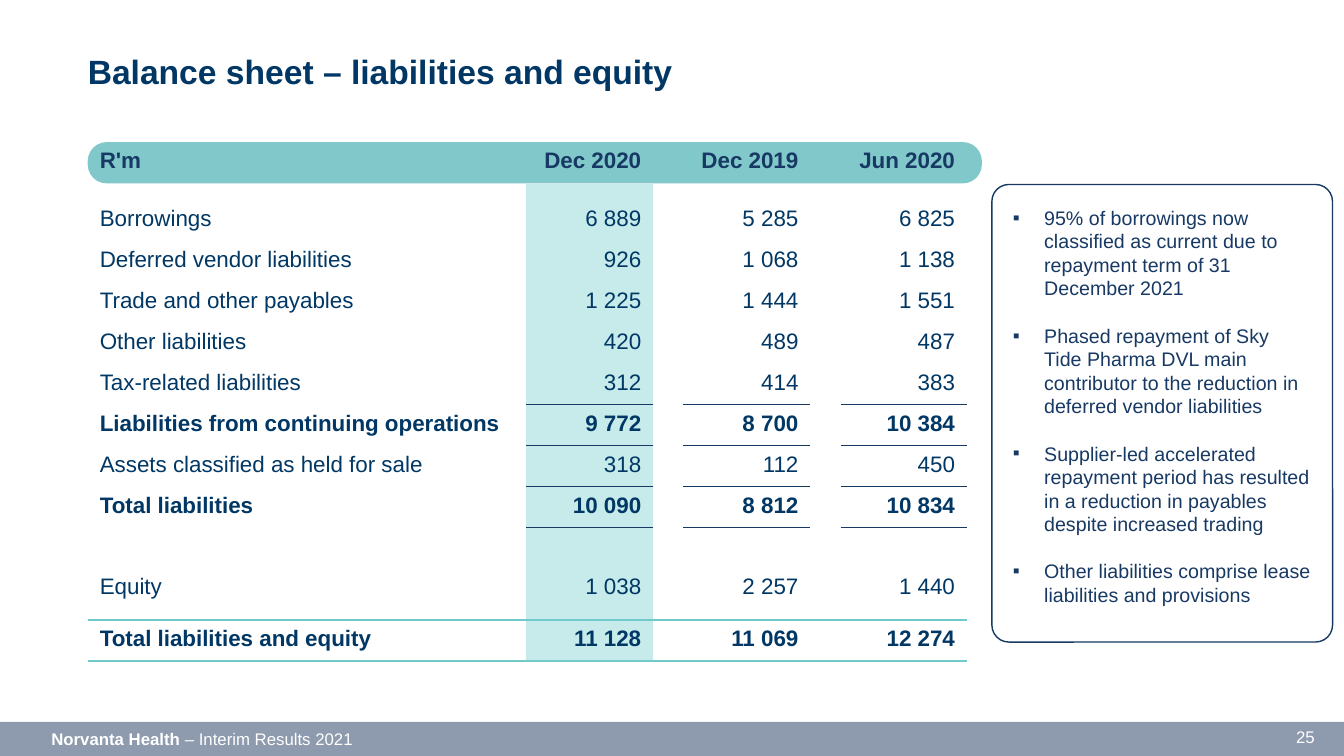
from dataclasses import dataclass

from lxml import etree
from pptx import Presentation
from pptx import util as u
from pptx.dml.color import RGBColor
from pptx.enum import shapes, text
from pptx.oxml import ns

NAVY, INK, TEAL, PALE = "003764", "173963", "81C8CB", "C7EBEB"
RULE, SLATE, WHITE = "70CACB", "8E9AAD", "FFFFFF"
NO_STYLE = "{2D5ABB26-0587-4C30-8999-92F81FD0307C}"
RIGHT, TOP, MIDDLE = text.PP_ALIGN.RIGHT, text.MSO_ANCHOR.TOP, text.MSO_ANCHOR.MIDDLE

# Lengths are percentages of the slide's width or height.
LEFT, TABLE_TOP = 6.53, 18.53
COLUMNS = [32.63, 9.45, 2.25, 9.45, 2.25, 9.4]
VALUE_COLUMNS = [1, 3, 5]
LINE = 5.41


@dataclass
class Row:
    label: str = ""
    values: tuple[str, ...] = ()
    height: float = LINE
    bold: bool = False
    color: str = NAVY
    spacing: float = 0.8
    rule: str = ""  # "sum" underlines the values, "total" the whole row


ROWS = [
    Row("R'm", ("Dec 2020", "Dec 2019", "Jun 2020"), 5.87, True, INK, 0.9),
    Row(height=2.13),
    Row("Borrowings", ("6 889", "5 285", "6 825")),
    Row("Deferred vendor liabilities", ("926", "1 068", "1 138")),
    Row("Trade and other payables", ("1 225", "1 444", "1 551")),
    Row("Other liabilities", ("420", "489", "487")),
    Row("Tax-related liabilities", ("312", "414", "383"), rule="sum"),
    Row("Liabilities from continuing operations", ("9 772", "8 700", "10 384"), bold=True),
    Row("Assets classified as held for sale", ("318", "112", "450"), rule="sum"),
    Row("Total liabilities", ("10 090", "8 812", "10 834"), bold=True),
    Row(),
    Row("Equity", ("1 038", "2 257", "1 440")),
    Row(height=1.47, rule="total"),
    Row("Total liabilities and equity", ("11 128", "11 069", "12 274"), bold=True, rule="total"),
]
COMMENTS = [
    "95% of borrowings now classified as current due to repayment term of 31 December 2021",
    "Phased repayment of Sky Tide Pharma DVL main contributor to the reduction in "
    "deferred vendor liabilities",
    "Supplier-led accelerated repayment period has resulted in a reduction in payables "
    "despite increased trading",
    "Other liabilities comprise lease liabilities and provisions",
]

deck = Presentation()
deck.slide_width, deck.slide_height = u.Inches(13.33), u.Inches(7.5)


def wide(share: float) -> int:
    return round(deck.slide_width * share / 100)


def high(share: float) -> int:
    return round(deck.slide_height * share / 100)


def area(left: float, top: float, width: float, height: float) -> tuple[int, ...]:
    return wide(left), high(top), wide(width), high(height)


def rgb(value: str) -> RGBColor:
    return RGBColor.from_string(value)


def write(para, words: str, *, size: float, color: str, bold: bool = False,
          align=text.PP_ALIGN.LEFT, spacing: float | None = None) -> None:
    para.alignment = align
    if spacing:
        para.line_spacing = spacing
    span = para.add_run()
    span.text = words
    span.font.name, span.font.size, span.font.bold = "Arial", u.Pt(size), bold
    span.font.color.rgb = rgb(color)


def set_insets(frame, inches: float) -> None:
    frame.margin_left = frame.margin_right = u.Inches(inches)
    frame.margin_top = frame.margin_bottom = u.Inches(inches)


def add_panel(page, kind, place: tuple[int, ...], fill: str, *,
              line: str = "", corner: float | None = None):
    panel = page.shapes.add_shape(kind, *place)
    panel.shadow.inherit = False
    panel.fill.solid()
    panel.fill.fore_color.rgb = rgb(fill)
    if line:
        panel.line.color.rgb, panel.line.width = rgb(line), u.Pt(1)
    else:
        panel.line.fill.background()
    if corner is not None:
        panel.adjustments[0] = corner
    return panel


def add_footer_text(page, place: tuple[int, ...], spans: list[tuple[str, bool]],
                    align=text.PP_ALIGN.LEFT) -> None:
    frame = page.shapes.add_textbox(*place).text_frame
    frame.word_wrap = True
    for words, bold in spans:
        write(frame.paragraphs[0], words, size=12, color=WHITE, bold=bold, align=align)


def add_bullet(para, inches: float) -> None:
    props = para._p.get_or_add_pPr()
    props.set("marL", str(u.Inches(inches)))
    props.set("indent", str(-u.Inches(inches)))
    etree.SubElement(props, ns.qn("a:buFont")).set("typeface", "Arial")
    etree.SubElement(props, ns.qn("a:buChar")).set("char", "▪")


def draw_edges(cell, column: int, above: str, below: str) -> None:
    """Draw the top and bottom borders that the neighbouring rules call for."""
    props = cell._tc.get_or_add_tcPr()
    position = 0
    for tag, rule in (("a:lnT", above), ("a:lnB", below)):
        if rule == "total" or rule == "sum" and column in VALUE_COLUMNS:
            color, points = (RULE, 1.5) if rule == "total" else (INK, 0.75)
            edge = etree.Element(ns.qn(tag), w=str(u.Pt(points)))
            fill = etree.SubElement(edge, ns.qn("a:solidFill"))
            etree.SubElement(fill, ns.qn("a:srgbClr")).set("val", color)
            props.insert(position, edge)
            position += 1


def fill_cell(cell, row: Row, column: int) -> None:
    cell.vertical_anchor = MIDDLE
    words = row.label if column == 0 else ""
    if row.values and column in VALUE_COLUMNS:
        words = row.values[VALUE_COLUMNS.index(column)]
    if words:
        cell.margin_left = cell.margin_right = u.Inches(0.12)
        cell.margin_top = cell.margin_bottom = u.Inches(0.08)
        write(cell.text_frame.paragraphs[0], words, size=16, color=row.color, bold=row.bold,
              align=RIGHT if column else text.PP_ALIGN.LEFT, spacing=row.spacing)
    else:
        set_insets(cell, 0)
        cell.text_frame.paragraphs[0].font.size = u.Pt(4)


def add_balance_table(page) -> None:
    place = area(LEFT, TABLE_TOP, sum(COLUMNS), sum(row.height for row in ROWS))
    table = page.shapes.add_table(len(ROWS), len(COLUMNS), *place).table
    table.first_row = table.horz_banding = False
    table._tbl.tblPr.find(ns.qn("a:tableStyleId")).text = NO_STYLE
    for column, share in enumerate(COLUMNS):
        table.columns[column].width = wide(share)
    above = ""
    for index, row in enumerate(ROWS):
        table.rows[index].height = high(row.height)
        for column in range(len(COLUMNS)):
            cell = table.cell(index, column)
            fill_cell(cell, row, column)
            if index and column == VALUE_COLUMNS[0]:
                cell.fill.solid()
                cell.fill.fore_color.rgb = rgb(PALE)
            else:
                cell.fill.background()
            draw_edges(cell, column, above, row.rule)
        above = row.rule


def add_comments(page) -> None:
    box = add_panel(page, shapes.MSO_SHAPE.ROUNDED_RECTANGLE, area(73.8, 24.4, 25.35, 60.53),
                    WHITE, line=INK, corner=0.05)
    frame = box.text_frame
    frame.word_wrap, frame.vertical_anchor = True, TOP
    set_insets(frame, 0.16)
    for index, comment in enumerate(COMMENTS):
        para = frame.add_paragraph() if index else frame.paragraphs[0]
        add_bullet(para, 0.31)
        if index:
            para.space_before = u.Pt(17)
        write(para, comment, size=14, color=INK)


def main() -> None:
    page = deck.slides.add_slide(deck.slide_layouts[5])
    add_panel(page, shapes.MSO_SHAPE.RECTANGLE, area(0, 95.47, 100, 4.53), SLATE)
    add_footer_text(page, area(71.33, 95.47, 27.23, 4), [("25", False)], RIGHT)
    add_footer_text(page, area(3.08, 95.73, 44.4, 4),
                    [("Norvanta Health", True), (" – Interim Results 2021", False)])
    add_panel(page, shapes.MSO_SHAPE.ROUNDED_RECTANGLE, area(LEFT, 18.8, 66.53, 5.47),
              TEAL, corner=0.46)
    title = page.shapes.title
    title.left, title.top, title.width, title.height = area(LEFT, 5.33, 56.48, 6.8)
    title.text_frame.vertical_anchor = text.MSO_ANCHOR.BOTTOM
    set_insets(title.text_frame, 0)
    write(title.text_frame.paragraphs[0], "Balance sheet – liabilities and equity",
          size=24, color=NAVY, bold=True)
    add_balance_table(page)
    add_comments(page)
    deck.save("out.pptx")


if __name__ == "__main__":
    main()
